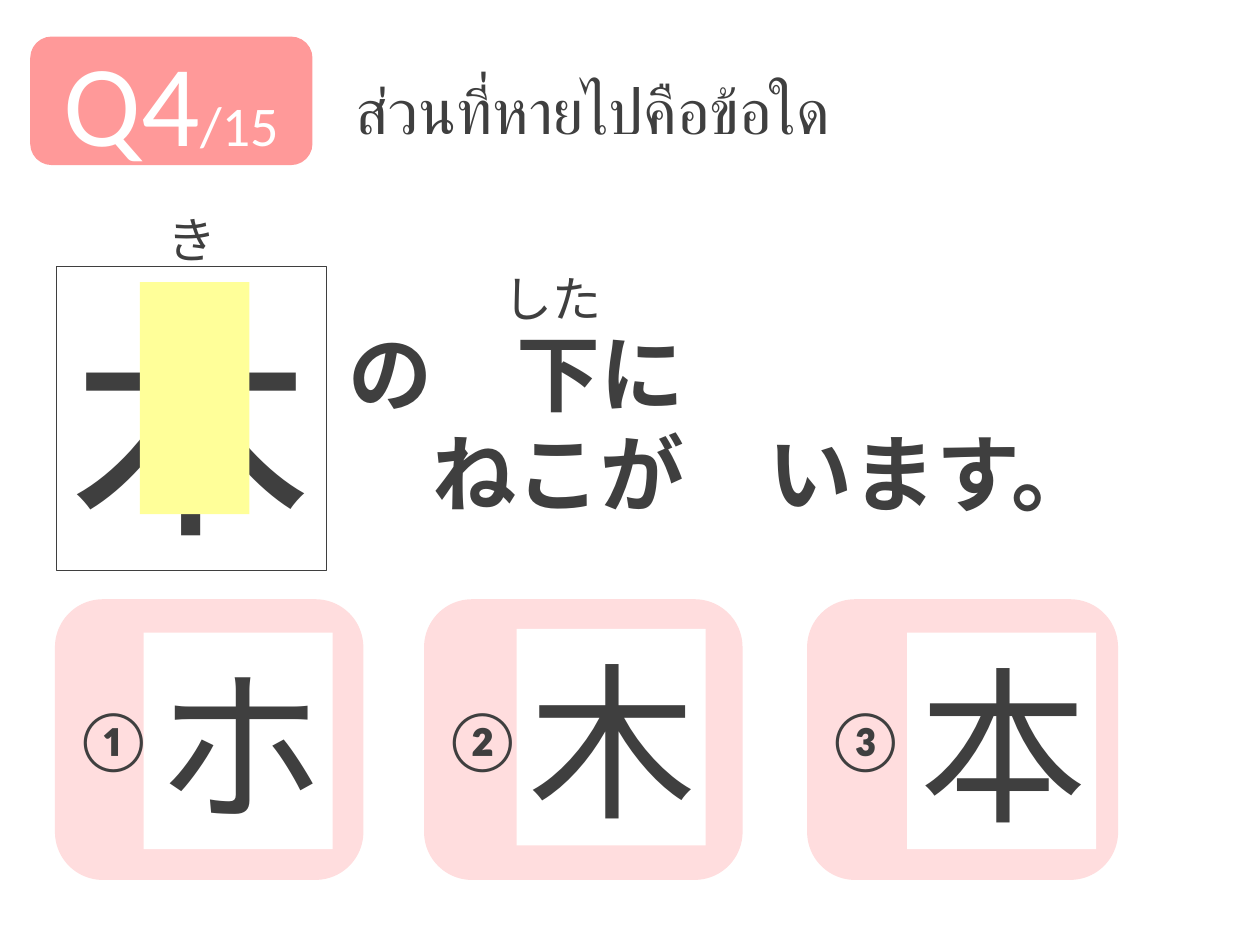
from pptx import Presentation
from pptx.dml.color import RGBColor
from pptx.enum import shapes, text
from pptx.util import Inches, Pt

DARK, WHITE, ROSE, PINK, LEMON = "3F3F3F", "FFFFFF", "FF9999", "FFDDDE", "FFFF99"
LEFT, MID, TOP, BOTTOM = "left", "mid", "top", "bottom"
ALIGN = {LEFT: text.PP_ALIGN.LEFT, MID: text.PP_ALIGN.CENTER}
ANCHOR = {TOP: text.MSO_ANCHOR.TOP, MID: text.MSO_ANCHOR.MIDDLE,
          BOTTOM: text.MSO_ANCHOR.BOTTOM}

ASK = "ส่วนที่หายไปคือข้อใด"
COUNT = [("Q4", 66), ("/15", 32)]
LINES = [("の　下に", 4), ("ねこが　います。", 5)]
KANJI = "木"
KANA = [("き", (0.45, 1.61, 2.14, 0.57), MID), ("した", (3.9, 2.08, 1.88, 0.57), LEFT)]
PICKS = [
    ("①", "ホ", 0.45, 2.42, 1.14, 5.02),
    ("②", "木", 3.38, 2.5, 4.1, 4.99),
    ("③", "本", 6.42, 2.44, 7.2, 5.02),
]
SIZE = 48

deck = Presentation()
deck.slide_width, deck.slide_height = Inches(10), Inches(7.5)
slide = deck.slides.add_slide(deck.slide_layouts[5])


def color(code):
    return RGBColor.from_string(code)


def place(box):
    return [Inches(v) for v in box]


def block(box, fill=None, line=None, width=2, kind="RECTANGLE"):
    shape = slide.shapes.add_shape(getattr(shapes.MSO_SHAPE, kind), *place(box))
    shape.shadow.inherit = False
    if fill:
        shape.fill.solid()
        shape.fill.fore_color.rgb = color(fill)
    else:
        shape.fill.background()
    if line:
        shape.line.color.rgb = color(line)
        shape.line.width = Pt(width)
    else:
        shape.line.fill.background()
    return shape


def setup(shape, anchor, grow=True, wrap=True):
    frame = shape.text_frame
    frame.word_wrap = wrap
    frame.vertical_anchor = ANCHOR[anchor]
    fit = text.MSO_AUTO_SIZE
    frame.auto_size = fit.SHAPE_TO_FIT_TEXT if grow else fit.NONE
    return frame


def write(para, runs, align=LEFT, bold=False, tint=DARK, face="Lato"):
    para.alignment = ALIGN[align]
    for words, size in runs:
        run = para.add_run()
        run.text = words
        font = run.font
        font.name, font.size, font.bold = face, Pt(size), bold
        font.color.rgb = color(tint)


def label(box, words, size, align):
    frame = setup(slide.shapes.add_textbox(*place(box)), TOP)
    write(frame.paragraphs[0], [(words, size)], align)


def glyph(shape, words, size, wrap=True):
    frame = setup(shape, BOTTOM, wrap=wrap)
    write(frame.paragraphs[0], [(words, size)], MID)


title = slide.shapes.title
title.left, title.top, title.width, title.height = place((2.72, 0.52, 6.85, 0.71))
write(setup(title, TOP).paragraphs[0], [(ASK, 36)])

badge = block((0.24, 0.29, 2.24, 1.02), ROSE, kind="ROUNDED_RECTANGLE")
write(setup(badge, MID, False).paragraphs[0], COUNT, MID, tint=WHITE, face="Calibri")

story = setup(slide.shapes.add_textbox(*place((0, 2.5, 10.18, 1.72))), TOP)
for row, (words, cells) in enumerate(LINES):
    para = story.add_paragraph() if row else story.paragraphs[0]
    para._p.get_or_add_pPr().set("marL", str(Pt(SIZE * cells)))
    write(para, [(words, SIZE)], bold=True)

glyph(block((0.45, 2.11, 2.14, 2.42), line=DARK, width=0.25), KANJI, 138, False)
block((1.11, 2.24, 0.87, 1.84), LEMON)
for words, box, align in KANA:
    label(box, words, 28, align)

for mark, sign, left, wide, inner, top in PICKS:
    card = block((left, 4.77, wide, 2.2), PINK, PINK, kind="ROUNDED_RECTANGLE")
    write(setup(card, MID, False).paragraphs[0], [(mark, 32)], bold=True)
    glyph(block((inner, top, 1.5, 1.72), WHITE), sign, 96)

deck.save("out.pptx")
